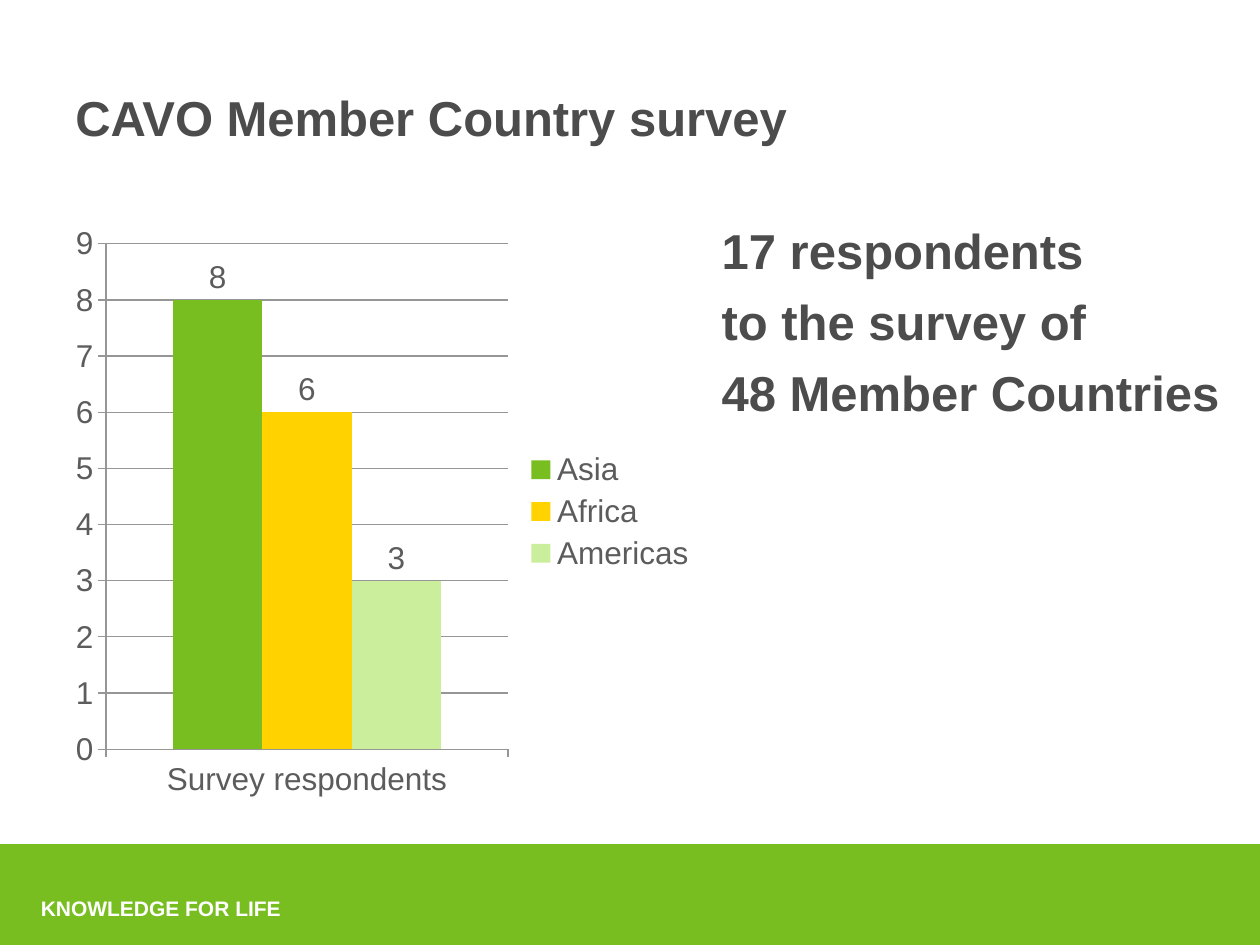
from dataclasses import dataclass

from pptx import Presentation
from pptx.chart.data import CategoryChartData
from pptx.dml.color import RGBColor
from pptx.enum.chart import XL_CHART_TYPE, XL_LABEL_POSITION, XL_LEGEND_POSITION, XL_TICK_MARK
from pptx.enum.shapes import MSO_SHAPE
from pptx.enum.text import MSO_ANCHOR, PP_ALIGN
from pptx.util import Inches, Pt


@dataclass(frozen=True)
class Theme:
    font: str = "Arial"
    green: str = "78BE20"
    yellow: str = "FFD200"
    pale_green: str = "CAEE9C"
    text: str = "4C4C4C"
    chart_text: str = "5C5C5C"
    axis: str = "969696"
    white: str = "FFFFFF"
    heading_size: int = 28
    chart_size: int = 18
    footer_size: int = 12


THEME = Theme()


def rgb(value):
    return RGBColor.from_string(value)


def add_text(s, text, box, size=THEME.heading_size, color=THEME.text, bold=True,
             align=PP_ALIGN.LEFT, anchor=MSO_ANCHOR.TOP, wrap=True, gap=0):
    """Place text in a box, one paragraph per line, with gap points between them."""
    tf = s.shapes.add_textbox(*map(Inches, box)).text_frame
    tf.word_wrap = wrap
    tf.vertical_anchor = anchor
    for i, line in enumerate(text.split("\n")):
        p = tf.paragraphs[0] if i == 0 else tf.add_paragraph()
        p.alignment = align
        p.space_before = Pt(gap if i else 0)
        r = p.add_run()
        r.text = line
        r.font.name = THEME.font
        r.font.size = Pt(size)
        r.font.bold = bold
        r.font.color.rgb = rgb(color)


def add_footer(s, box):
    left, top, _, _ = box
    band = s.shapes.add_shape(MSO_SHAPE.RECTANGLE, *map(Inches, box))
    band.shadow.inherit = False
    band.fill.solid()
    band.fill.fore_color.rgb = rgb(THEME.green)
    band.line.fill.background()
    add_text(s, "KNOWLEDGE FOR LIFE", (left + 0.2, top + 0.36, 2.13, 0.3),
             size=THEME.footer_size, color=THEME.white, align=PP_ALIGN.RIGHT, wrap=False)


def add_survey_chart(s, box):
    regions = [("Asia", 8, THEME.green), ("Africa", 6, THEME.yellow),
               ("Americas", 3, THEME.pale_green)]
    data = CategoryChartData()
    data.categories = ["Survey respondents"]
    for name, count, _ in regions:
        data.add_series(name, [count])
    chart = s.shapes.add_chart(XL_CHART_TYPE.COLUMN_CLUSTERED,
                               *map(Inches, box), data).chart
    chart.has_title = False
    chart.font.name = THEME.font
    chart.font.size = Pt(THEME.chart_size)
    chart.font.color.rgb = rgb(THEME.chart_text)

    # Columns and their labels
    plot = chart.plots[0]
    plot.vary_by_categories = False
    plot.gap_width = 150
    plot.overlap = 0
    for series, (_, _, color) in zip(plot.series, regions):
        series.format.fill.solid()
        series.format.fill.fore_color.rgb = rgb(color)
        labels = series.data_labels
        labels.show_value = True
        labels.position = XL_LABEL_POSITION.OUTSIDE_END

    # Axes and gridlines
    value_axis = chart.value_axis
    value_axis.minimum_scale, value_axis.maximum_scale = 0, 9
    value_axis.major_unit = 1
    value_axis.has_major_gridlines = True
    for axis in (value_axis, chart.category_axis):
        axis.major_tick_mark = XL_TICK_MARK.OUTSIDE
        axis.minor_tick_mark = XL_TICK_MARK.NONE
    for part in (value_axis, chart.category_axis, value_axis.major_gridlines):
        part.format.line.color.rgb = rgb(THEME.axis)
        part.format.line.width = Pt(0.75)

    chart.has_legend = True
    chart.legend.position = XL_LEGEND_POSITION.RIGHT
    chart.legend.include_in_layout = False


def build_survey_slide(prs):
    s = prs.slides.add_slide(prs.slide_layouts[6])
    add_footer(s, (0, 6.7, 10, 0.83))
    add_text(s, "CAVO Member Country survey", (0.5, 0.3, 9, 1.25), anchor=MSO_ANCHOR.MIDDLE)
    add_survey_chart(s, (0.5, 1.7, 5.13, 4.72))
    add_text(s, "17 respondents\nto the survey of\n48 Member Countries",
             (5.63, 1.7, 4.33, 4.72), gap=7)


def main():
    prs = Presentation()
    prs.slide_width, prs.slide_height = Inches(10), Inches(7.5)
    build_survey_slide(prs)
    prs.save("out.pptx")


if __name__ == "__main__":
    main()
